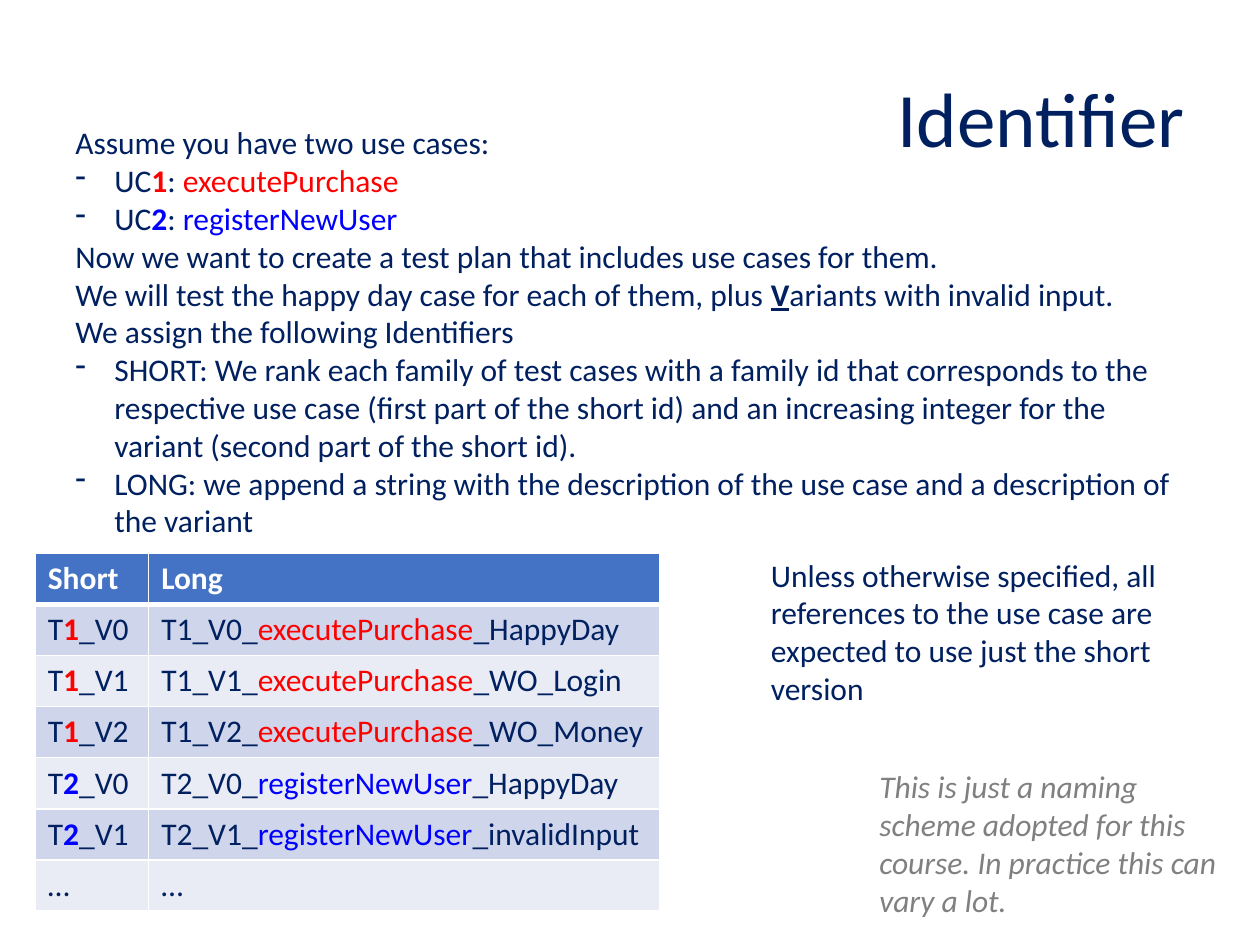
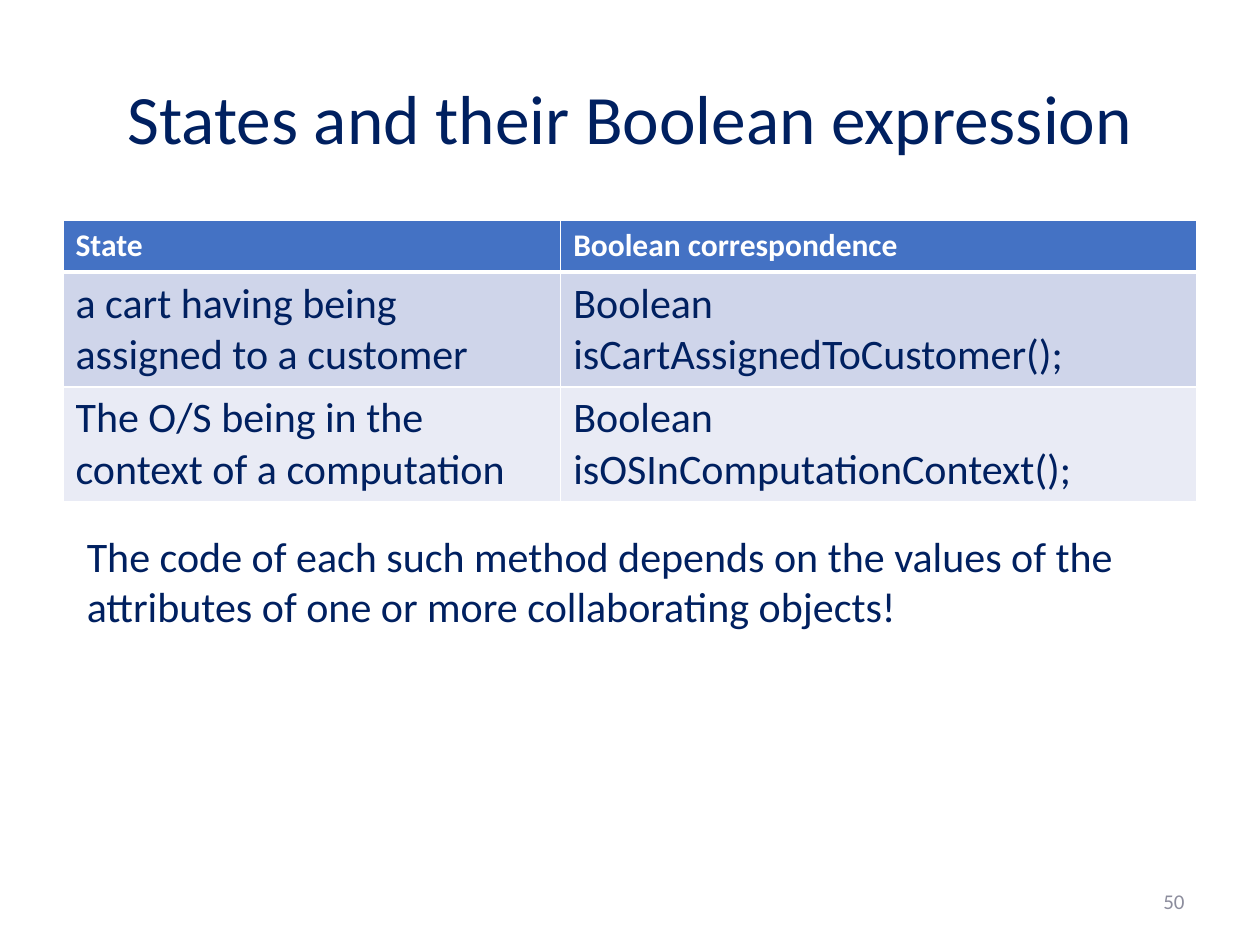
from pptx import Presentation
from pptx.dml.color import RGBColor as RGB
from pptx.enum.shapes import MSO_SHAPE as Shape
from pptx.enum.text import MSO_ANCHOR as Anchor, PP_ALIGN as Align
from pptx.oxml import parse_xml
from pptx.oxml.ns import nsdecls
from pptx.util import Inches, Pt

COLORS = {"navy": "002060", "red": "FF0000", "blue": "0000FF", "white": "FFFFFF",
          "gray": "808080", "number": "8C8D9D", "header": "4472C4",
          "odd": "CFD5EA", "even": "E9EBF5"}
ACCENTS = {"id1": ("red", True, False), "id2": ("blue", True, False),
           "uc1": ("red", False, False), "uc2": ("blue", False, False),
           "strong": ("navy", True, True)}
FONT = "Calibri"

deck = Presentation()
deck.slide_width, deck.slide_height = Inches(10), Inches(7.5)
COL, ROW = deck.slide_width // 100, deck.slide_height // 75
TITLE_AREA = (5, 3, 90, 12.5)


def write(frame, text, size=18, color="navy", bold=False, italic=False,
          align=Align.LEFT, anchor=Anchor.TOP):
    frame.word_wrap = True
    frame.vertical_anchor = anchor
    for number, line in enumerate(text.split("\n")):
        paragraph = frame.add_paragraph() if number else frame.paragraphs[0]
        paragraph.alignment = align
        if line.startswith("- "):
            line = line[2:]
            props = paragraph._p.get_or_add_pPr()
            props.set("marL", str(Inches(0.31)))
            props.set("indent", str(-Inches(0.31)))
            props.append(parse_xml(f'<a:buChar {nsdecls("a")} char="-"/>'))
        for part, words in enumerate(line.split("|")):
            shade, heavy, underlined = color, bold, False
            if part % 2:
                accent, words = words.split(":")
                shade, heavy, underlined = ACCENTS[accent]
            run = paragraph.add_run()
            run.text = words
            run.font.name, run.font.size = FONT, Pt(size)
            run.font.bold, run.font.italic = heavy, italic
            run.font.underline = underlined
            run.font.color.rgb = RGB.from_string(COLORS[shade])


def add_grid(slide, left, top, widths, heights, rows, size=18):
    grid = slide.shapes.add_table(
        len(rows), len(widths), int(left * COL), int(top * ROW),
        int(sum(widths) * COL), int(sum(heights) * ROW)).table
    for column, width in zip(grid.columns, widths):
        column.width = int(width * COL)
    for r, texts in enumerate(rows):
        grid.rows[r].height = int(heights[r] * ROW)
        for c, text in enumerate(texts):
            cell = grid.cell(r, c)
            for side in "LRTB":
                thick = (r, side) in ((0, "B"), (1, "T"))
                cell._tc.get_or_add_tcPr().append(parse_xml(
                    f'<a:ln{side} {nsdecls("a")} w="{Pt(3 if thick else 1)}"><a:solidFill>'
                    f'<a:srgbClr val="{COLORS["white"]}"/></a:solidFill></a:ln{side}>'))
            cell.fill.solid()
            band = ("odd" if r % 2 else "even") if r else "header"
            cell.fill.fore_color.rgb = RGB.from_string(COLORS[band])
            write(cell.text_frame, text, size=size if r else 18,
                  color="navy" if r else "white", bold=r == 0)


identifier, states = [deck.slides.add_slide(deck.slide_layouts[6]) for _ in range(2)]

cases = [("1", "0", "executePurchase", "HappyDay"),
         ("1", "1", "executePurchase", "WO_Login"),
         ("1", "2", "executePurchase", "WO_Money"),
         ("2", "0", "registerNewUser", "HappyDay"),
         ("2", "1", "registerNewUser", "invalidInput")]
names = [(f"T|id{family}:{family}|_V{variant}",
          f"T{family}_V{variant}_|uc{family}:{use_case}|_{outcome}")
         for family, variant, use_case, outcome in cases]
add_grid(identifier, 2.8, 43.9, [9, 40.6], [4.06] * 7,
         [("Short", "Long"), *names, ("…", "…")])

add_grid(states, 5, 17.5, [39.5, 50.5], [4.1, 9.1, 9.1], [
    ("State", "Boolean correspondence"),
    ("a cart having being assigned to a customer", "Boolean isCartAssignedToCustomer();"),
    ("The O/S being in the context of a computation", "Boolean isOSInComputationContext();"),
], size=24)

assumptions = """Assume you have two use cases:
- UC|id1:1|: |uc1:executePurchase
- UC|id2:2|: |uc2:registerNewUser
Now we want to create a test plan that includes use cases for them.
We will test the happy day case for each of them, plus |strong:V|ariants with invalid input.
We assign the following Identifiers
- SHORT: We rank each family of test cases with a family id that corresponds to the \
respective use case (first part of the short id) and an increasing integer for the \
variant (second part of the short id).
- LONG: we append a string with the description of the use case and a description of \
the variant"""
naming_note = ("This is just a naming scheme adopted for this course. "
               "In practice this can vary a lot.")
short_rule = ("Unless otherwise specified, all references to the use case "
              "are expected to use just the short version")
method_note = ("The code of each such method depends on the values of the attributes "
               "of one or more collaborating objects!")

for slide, area, text, style in [
    (identifier, TITLE_AREA, "Identifier",
     dict(size=44, align=Align.RIGHT, anchor=Anchor.MIDDLE)),
    (identifier, (5, 9.3, 90, 34.3), assumptions, {}),
    (identifier, (68.8, 60.4, 29.1, 13.1), naming_note, dict(color="gray", italic=True)),
    (identifier, (60.2, 43.6, 33.9, 13.1), short_rule, {}),
    (states, TITLE_AREA, "States and their Boolean expression",
     dict(size=39.6, align=Align.CENTER, anchor=Anchor.MIDDLE)),
    (states, (71.7, 69.5, 23.3, 4), "50",
     dict(size=12, color="number", align=Align.RIGHT, anchor=Anchor.MIDDLE)),
    (states, (5.9, 41.6, 89.1, 9.1), method_note, dict(size=24)),
]:
    left, top, width, height = area
    place = int(left * COL), int(top * ROW), int(width * COL), int(height * ROW)
    if text == naming_note:
        block = slide.shapes.add_shape(Shape.RECTANGLE, *place)
        block.shadow.inherit = False
        block.fill.solid()
        block.fill.fore_color.rgb = RGB.from_string(COLORS["white"])
        block.line.fill.background()
    else:
        block = slide.shapes.add_textbox(*place)
    write(block.text_frame, text, **style)

deck.save("out.pptx")
